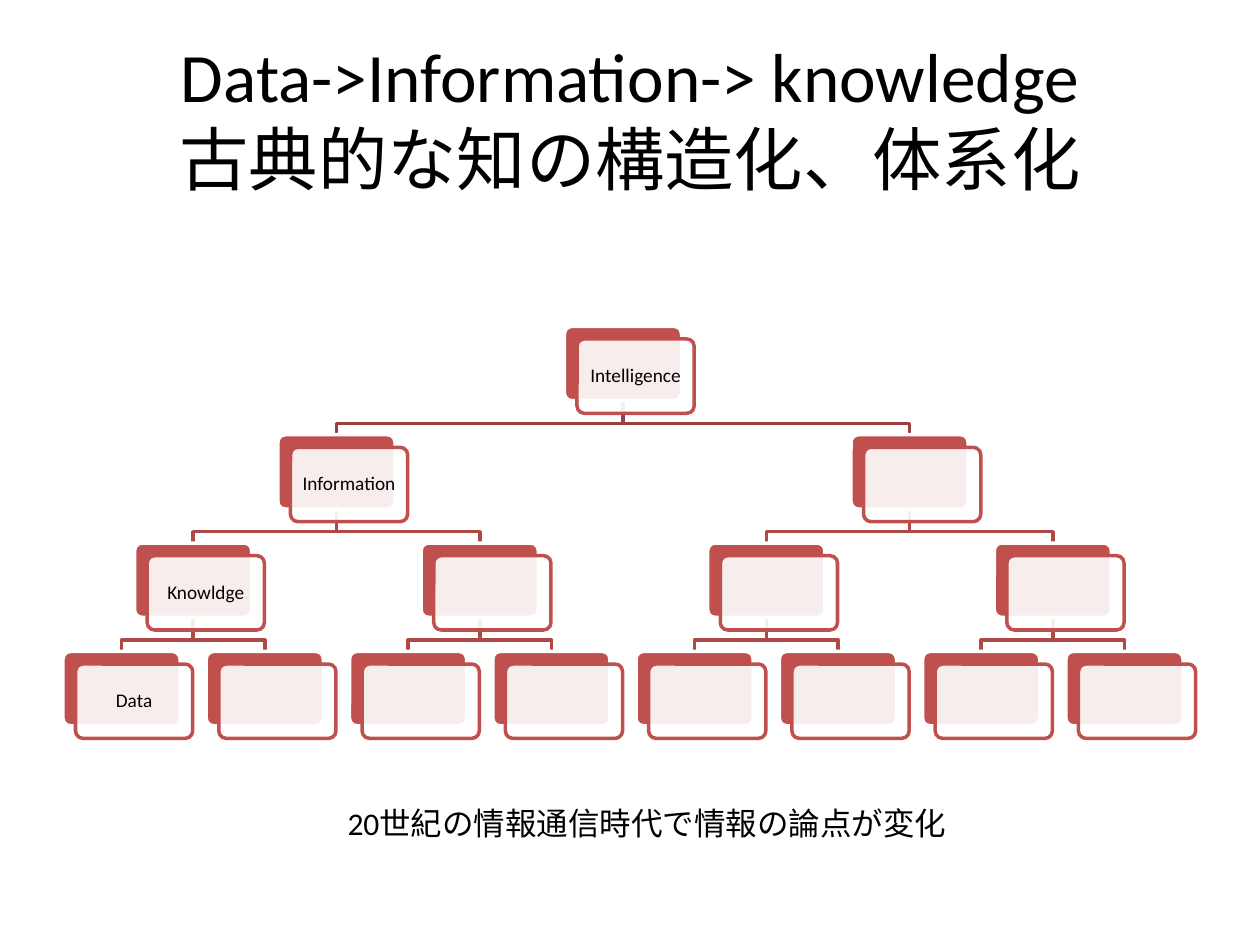
"""Build a slide showing the classical hierarchy from data to intelligence."""
from dataclasses import dataclass

from lxml.etree import SubElement
from pptx import Presentation
from pptx.dml.color import RGBColor as RGB
from pptx.enum.shapes import MSO_SHAPE as Shape
from pptx.enum.text import MSO_ANCHOR as Anchor, MSO_AUTO_SIZE as AutoSize, PP_ALIGN as Align
from pptx.oxml.ns import qn
from pptx.util import Inches, Pt


@dataclass(frozen=True)
class Theme:
    font: str = "Calibri"
    ink: RGB = RGB(0x00, 0x00, 0x00)
    white: RGB = RGB(0xFF, 0xFF, 0xFF)
    card: RGB = RGB(0xC0, 0x50, 0x4D)
    root_branch: RGB = RGB(0x9A, 0x40, 0x3E)
    branch: RGB = RGB(0xAE, 0x49, 0x46)
    line: Pt = Pt(2)
    title: Pt = Pt(39.6)
    caption: Pt = Pt(18)
    label: Pt = Pt(11)


THEME = Theme()


def add_text(paragraph, text, size):
    run = paragraph.add_run()
    run.text = text
    run.font.name = THEME.font
    run.font.size = size
    run.font.color.rgb = THEME.ink


def add_card(shapes, left, top, fill, outline):
    card = shapes.add_shape(Shape.ROUNDED_RECTANGLE, left, top, CARD_WIDTH, CARD_HEIGHT)
    card.adjustments[0] = 0.1
    card.shadow.inherit = False
    card.fill.solid()
    card.fill.fore_color.rgb = fill
    card.line.color.rgb = outline
    card.line.width = THEME.line
    return card


prs = Presentation()
prs.slide_width, prs.slide_height = Inches(10), Inches(7.5)
slide = prs.slides.add_slide(prs.slide_layouts[5])

title = slide.shapes.title
title.left, title.top, title.width, title.height = Inches(0.5), Inches(0.3), Inches(9), Inches(1.25)
title.text_frame.auto_size = AutoSize.NONE
title.text_frame.vertical_anchor = Anchor.MIDDLE
heading = title.text_frame.paragraphs[0]
heading.alignment = Align.CENTER
add_text(heading, "Data->Information-> knowledge", THEME.title)
heading.add_line_break()
add_text(heading, "古典的な知の構造化、体系化", THEME.title)

LEVELS = ["Intelligence", "Information", "Knowldge", "Data"]
CARD_WIDTH, CARD_HEIGHT = Inches(0.93), Inches(0.59)
FRONT_OFFSET = Inches(0.1)
FIRST_LEFT, LAST_LEFT = Inches(0.5), Inches(8.46)
FIRST_TOP, LEVEL_STEP = Inches(2.59), Inches(0.86)
ELBOW_DROP = Inches(0.18)
leaf_count = 2 ** (len(LEVELS) - 1)
leaf_step = (LAST_LEFT - FIRST_LEFT) / (leaf_count - 1)

lefts = []
for level in range(len(LEVELS)):
    span = leaf_count / 2 ** level
    lefts.append([round(FIRST_LEFT + leaf_step * ((i + 0.5) * span - 0.5)) for i in range(2 ** level)])
tops = [FIRST_TOP + level * LEVEL_STEP for level in range(len(LEVELS))]

tree = slide.shapes.add_group_shape().shapes

for level in range(1, len(LEVELS)):
    for i, left in enumerate(lefts[level]):
        parent_x = lefts[level - 1][i // 2] + CARD_WIDTH // 2
        child_x = left + CARD_WIDTH // 2
        parent_bottom = tops[level - 1] + CARD_HEIGHT
        elbow_y = parent_bottom + ELBOW_DROP
        route = tree.build_freeform(parent_x, parent_bottom)
        route.add_line_segments([(parent_x, elbow_y), (child_x, elbow_y), (child_x, tops[level])], close=False)
        branch = route.convert_to_shape()
        branch.shadow.inherit = False
        branch.fill.background()
        branch.line.color.rgb = THEME.root_branch if level == 1 else THEME.branch
        branch.line.width = THEME.line

for level, label in enumerate(LEVELS):
    for i, left in enumerate(lefts[level]):
        add_card(tree, left, tops[level], THEME.card, THEME.white)
        front = add_card(tree, left + FRONT_OFFSET, tops[level] + FRONT_OFFSET, THEME.white, THEME.card)
        front_color = front._element.spPr.find(qn("a:solidFill"))[0]
        SubElement(front_color, qn("a:alpha"), val="90000")
        if i == 0:
            frame = front.text_frame
            frame.word_wrap = True
            frame.vertical_anchor = Anchor.MIDDLE
            frame.margin_left = frame.margin_right = frame.margin_top = frame.margin_bottom = Inches(0.05)
            paragraph = frame.paragraphs[0]
            paragraph.alignment = Align.CENTER
            paragraph.line_spacing = 0.9
            add_text(paragraph, label, THEME.label)

caption = slide.shapes.add_textbox(Inches(2.66), Inches(6.33), Inches(5.31), Inches(0.4)).text_frame
caption.word_wrap = True
caption.auto_size = AutoSize.SHAPE_TO_FIT_TEXT
add_text(caption.paragraphs[0], "20世紀の情報通信時代で情報の論点が変化", THEME.caption)

prs.save("out.pptx")
